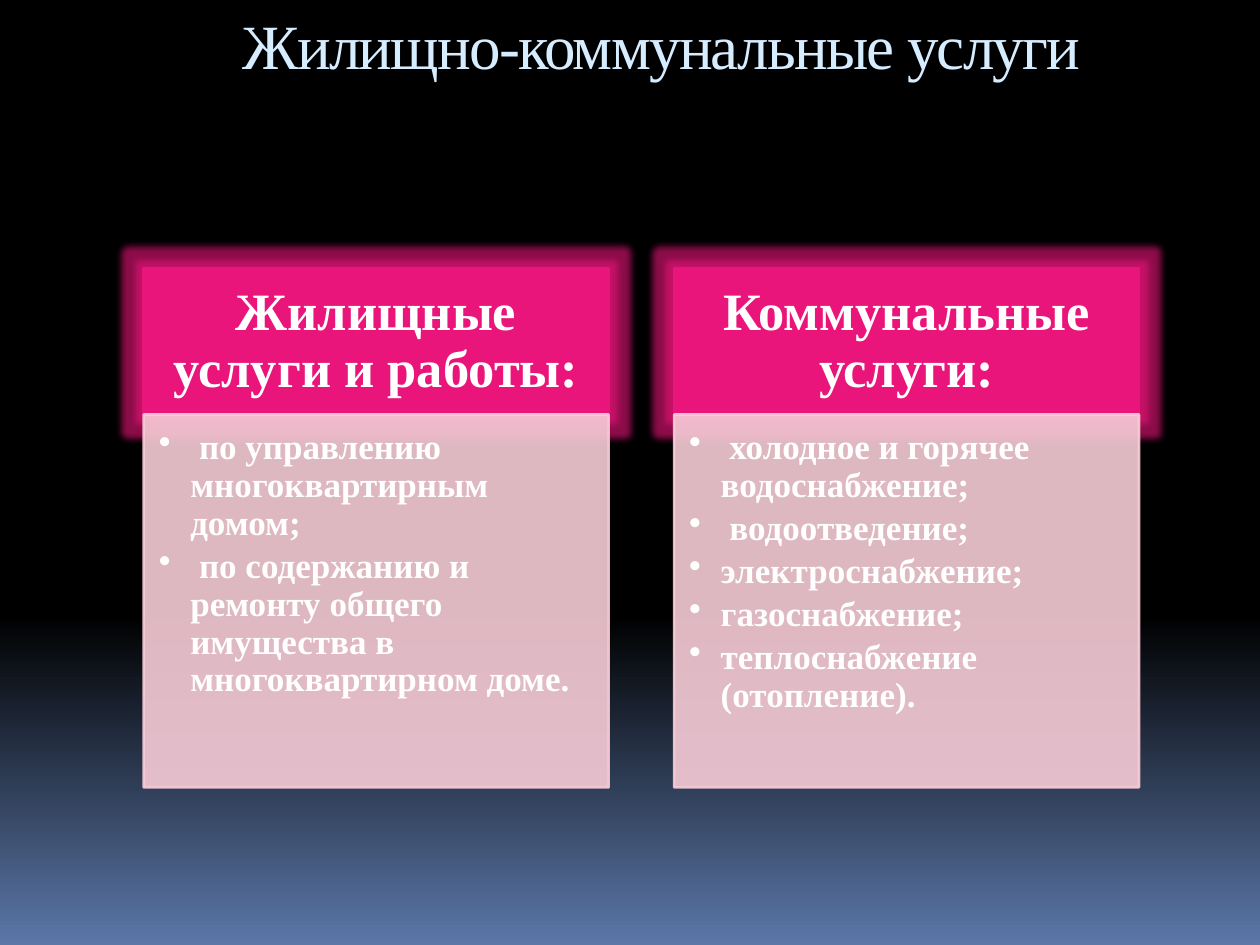
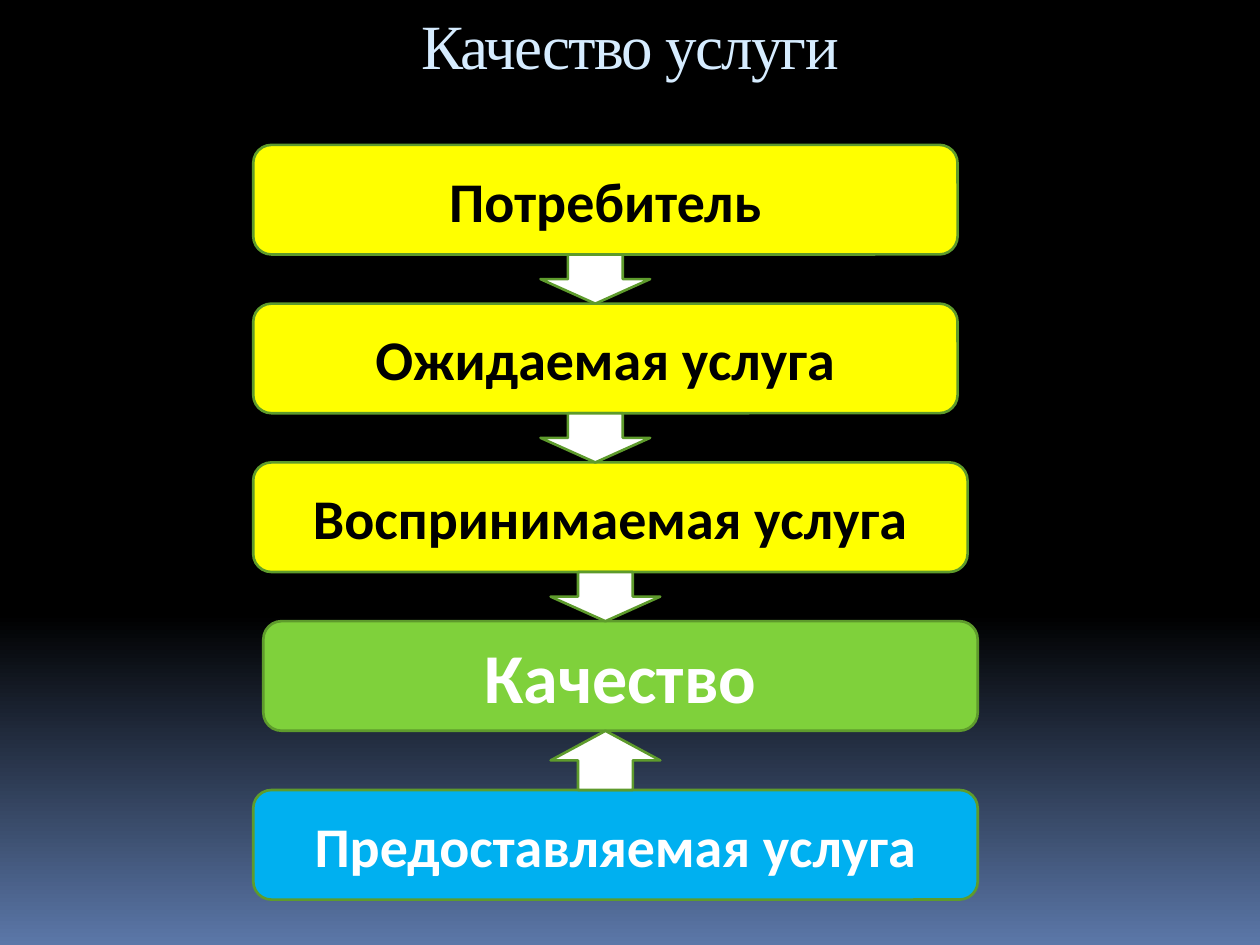
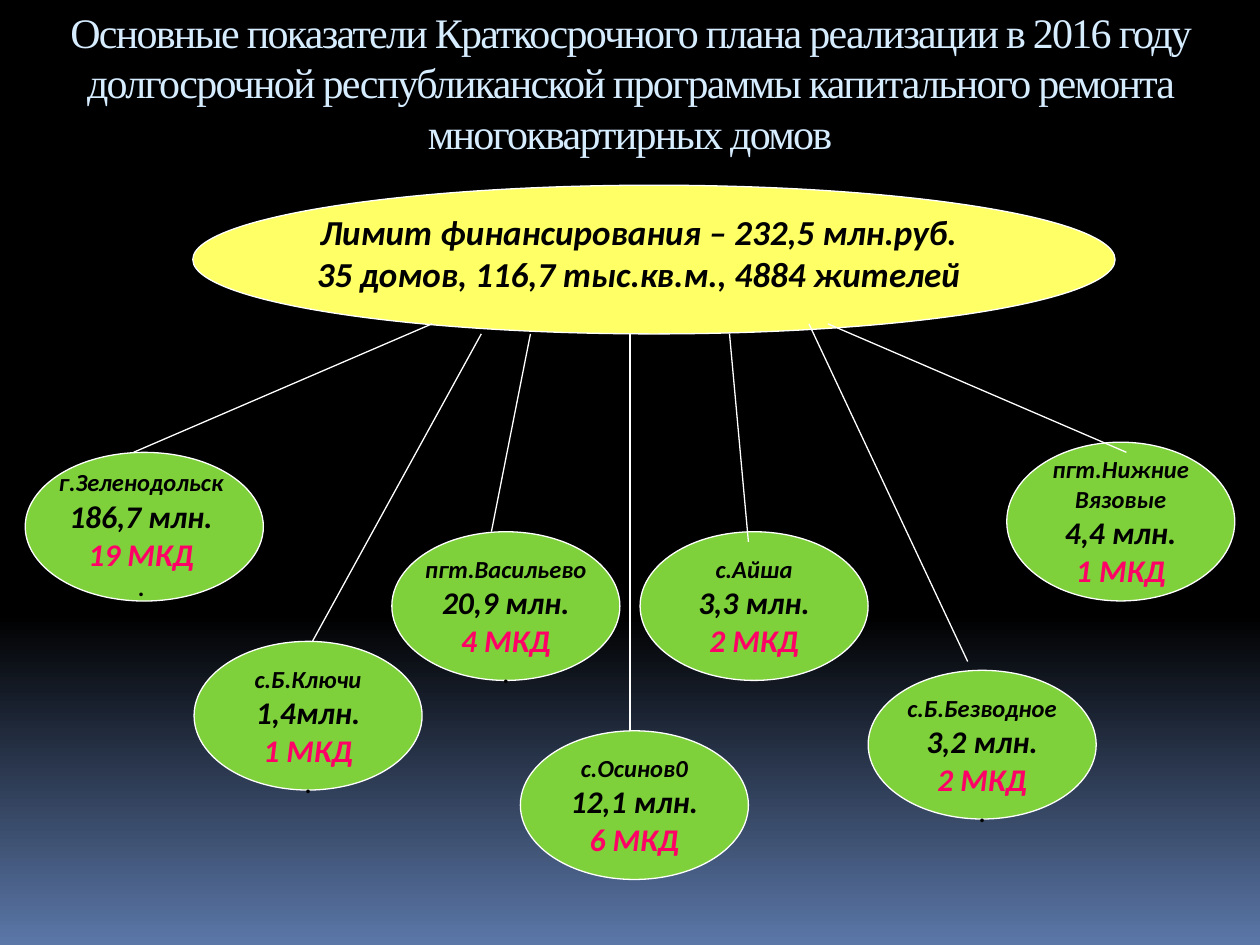
from dataclasses import dataclass, replace
from lxml.etree import SubElement
from pptx import Presentation
from pptx.dml.color import RGBColor
from pptx.enum.shapes import MSO_CONNECTOR, MSO_SHAPE
from pptx.enum.text import MSO_ANCHOR, PP_ALIGN
from pptx.oxml.ns import qn
from pptx.util import Inches, Pt


@dataclass(frozen=True)
class Type:
    size: float
    color: str
    font: str = "Calibri"
    bold: bool = True
    italic: bool = False
    spacing: int = 0
    leading: float = 1.0
    after: float = 0
    bullet: bool = False


@dataclass(frozen=True)
class Theme:
    black: str = "000000"
    white: str = "FFFFFF"
    dusk: str = "5B77A8"
    pink: str = "EA157A"
    blush: str = "F7CCD7"
    yellow: str = "FFFF00"
    lemon: str = "FFFF66"
    green: str = "7FD13B"
    leaf: str = "5E9B2C"
    blue: str = "00B0F0"
    serif: str = "Times New Roman"
    title: Type = Type(36, "D6ECFF", serif, bold=False, spacing=-100)
    long_title: Type = replace(title, size=24)
    heading: Type = Type(30, white, serif, leading=0.9)
    item: Type = Type(20, white, serif, leading=0.9, after=3, bullet=True)
    step: Type = Type(32, black)
    light_step: Type = replace(step, color=white)
    result: Type = replace(light_step, size=40)
    limit: Type = Type(20, black, italic=True)
    place: Type = replace(limit, size=14)
    money: Type = replace(limit, size=18)
    houses: Type = replace(money, color="FF0066")
    dot: Type = replace(place, italic=False)


class Deck:
    COLUMNS, ROWS = 100, 75

    def __init__(self, theme):
        self.theme = theme
        self.prs = Presentation()
        self.prs.slide_width, self.prs.slide_height = Inches(10), Inches(7.5)
        self.s = None

    def slide(self):
        self.s = self.prs.slides.add_slide(self.prs.slide_layouts[6])
        fill = self.s.background.fill
        fill.gradient()
        fill.gradient_angle = 270
        stops = ((0.65, self.theme.black), (1, self.theme.dusk))
        for stop, (position, color) in zip(fill.gradient_stops, stops):
            stop.position = position
            stop.color.rgb = RGBColor.from_string(color)

    def x(self, columns):
        return round(self.prs.slide_width * columns / self.COLUMNS)

    def y(self, rows):
        return round(self.prs.slide_height * rows / self.ROWS)

    def box(self, left, top, width, height):
        return self.x(left), self.y(top), self.x(width), self.y(height)

    def fill_text(self, shape, lines, anchor=MSO_ANCHOR.TOP, insets=(1, 0.5, 1, 0.5), wrap=True):
        tf = shape.text_frame
        tf.word_wrap, tf.vertical_anchor = wrap, anchor
        left, top, right, bottom = insets
        tf.margin_left, tf.margin_right = self.x(left), self.x(right)
        tf.margin_top, tf.margin_bottom = self.y(top), self.y(bottom)
        for i, (text, style) in enumerate(lines):
            p = tf.add_paragraph() if i else tf.paragraphs[0]
            p.alignment = PP_ALIGN.LEFT if style.bullet else PP_ALIGN.CENTER
            p.line_spacing, p.space_after = style.leading, Pt(style.after)
            p.font.name, p.font.size = style.font, Pt(style.size)
            p.font.bold, p.font.italic = style.bold, style.italic
            p.font.color.rgb = RGBColor.from_string(style.color)
            r = p.add_run()
            r.text = text
            if style.spacing:
                r._r.get_or_add_rPr().set("spc", str(style.spacing))
            if style.bullet:
                self.bullet(p)

    def bullet(self, p):
        pPr = p._p.get_or_add_pPr()
        pPr.set("marL", str(self.x(2.5)))
        pPr.set("indent", str(-self.x(2.5)))
        mark = pPr.makeelement(qn("a:buChar"), {"char": "•"})
        pPr.find(qn("a:defRPr")).addprevious(mark)

    def text(self, at, lines):
        self.fill_text(self.s.shapes.add_textbox(*self.box(*at)), lines)

    def title(self, text, at, style):
        self.text(at, [(text, style)])

    def shape(self, kind, at, fill, line, weight=1.5):
        sp = self.s.shapes.add_shape(kind, *self.box(*at))
        sp.shadow.inherit = False
        sp.fill.solid()
        sp.fill.fore_color.rgb = RGBColor.from_string(fill)
        sp.line.color.rgb = RGBColor.from_string(line)
        sp.line.width = Pt(weight)
        return sp

    def ellipse(self, at, fill):
        return self.shape(MSO_SHAPE.OVAL, at, fill, self.theme.white, 0.75)

    def glow(self, sp, color):
        effects = sp._element.spPr.find(qn("a:effectLst"))
        glow = SubElement(effects, qn("a:glow"), rad=str(self.x(1.1)))
        clr = SubElement(glow, qn("a:srgbClr"), val=color)
        SubElement(clr, qn("a:alpha"), val="60000")

    def translucent(self, sp, percent):
        for clr in sp._element.spPr.iter(qn("a:srgbClr")):
            SubElement(clr, qn("a:alpha"), val=str(percent * 1000))

    def line(self, x1, y1, x2, y2):
        c = self.s.shapes.add_connector(
            MSO_CONNECTOR.STRAIGHT, self.x(x1), self.y(y1), self.x(x2), self.y(y2))
        c.line.color.rgb = RGBColor.from_string(self.theme.white)
        c.line.width = Pt(0.75)
        SubElement(c._element.spPr, qn("a:effectLst"))

    def card(self, left, heading, items):
        t = self.theme
        head = self.shape(MSO_SHAPE.RECTANGLE, (left, 21.3, 36.9, 11.7), t.pink, t.pink)
        self.glow(head, t.pink)
        self.fill_text(head, [(heading, t.heading)], MSO_ANCHOR.MIDDLE, (2.3, 1.3, 2.3, 1.3))
        body = self.shape(MSO_SHAPE.RECTANGLE, (left, 32.9, 36.9, 29.6), t.blush, t.blush)
        self.translucent(body, 90)
        self.fill_text(body, [(item, t.item) for item in items], insets=(1.2, 1.2, 1.6, 1.8))

    def step(self, at, text, fill, style):
        sp = self.shape(MSO_SHAPE.ROUNDED_RECTANGLE, at, fill, self.theme.leaf)
        self.fill_text(sp, [(text, style)], MSO_ANCHOR.MIDDLE)

    def arrow(self, at, rotation=0):
        sp = self.shape(MSO_SHAPE.DOWN_ARROW, at, self.theme.white, self.theme.leaf)
        sp.rotation = rotation

    def place_lines(self, names, money, houses, dotted):
        t = self.theme
        lines = [(name, t.place) for name in names]
        lines += [(money, t.money), (houses, t.houses)]
        return lines + [(".", t.dot)] * dotted

    def place(self, left, top, names, money, houses, dotted=False, height=11.8):
        sp = self.ellipse((left, top, 18.1, height), self.theme.green)
        insets = (1, 2.9 if dotted else 0.5, 1, 0.5)
        self.fill_text(sp, self.place_lines(names, money, houses, dotted),
                       MSO_ANCHOR.MIDDLE, insets, wrap=False)


def services(deck):
    deck.slide()
    deck.card(11.4, "Жилищные услуги и работы:", [
        " по управлению многоквартирным домом;",
        " по содержанию и ремонту общего имущества в многоквартирном доме."])
    deck.card(53.5, "Коммунальные услуги:", [
        " холодное и горячее водоснабжение;", " водоотведение;",
        "электроснабжение;", "газоснабжение;", "теплоснабжение (отопление)."])
    deck.title("Жилищно-коммунальные услуги", (10, 0, 85, 8.4), deck.theme.title)


def quality(deck):
    t = deck.theme
    deck.slide()
    deck.title("Качество услуги", (0, 0, 100, 7.1), t.title)
    top, pitch, height = 11.5, 12.6, 8.7
    steps = [
        (20.1, 55.9, "Потребитель", t.yellow, t.step),
        (20.1, 55.9, "Ожидаемая услуга", t.yellow, t.step),
        (20.1, 56.7, "Воспринимаемая услуга", t.yellow, t.step),
        (20.9, 56.7, "Качество", t.green, t.result)]
    for i, (left, width, text, fill, style) in enumerate(steps):
        deck.step((left, top + i * pitch, width, height), text, fill, style)
    deck.step((20.1, 62.7, 57.5, height), "Предоставляемая услуга", t.blue, t.light_step)
    for i, left in enumerate((42.9, 42.9, 43.7)):
        deck.arrow((left, top + height + i * pitch, 8.7, pitch - height))
    deck.arrow((43.7, 58, 8.7, 4.7), 180)


def plan(deck):
    t = deck.theme
    deck.slide()
    deck.title("Основные показатели Краткосрочного плана реализации в 2016 году "
               "долгосрочной республиканской программы капитального ремонта "
               "многоквартирных домов", (0, 0, 100, 13.1), t.long_title)
    deck.ellipse((15.3, 14.7, 73.2, 11.8), t.lemon)
    deck.text((23.8, 16.2, 53.8, 7.7), [
        ("Лимит финансирования – 232,5 млн.руб.", t.limit),
        ("35 домов, 116,7 тыс.кв.м., 4884 жителей", t.limit)])
    deck.ellipse((2, 35.9, 18.9, 11.8), t.green)
    deck.text((0, 36.6, 22.4, 11.8),
              deck.place_lines(["г.Зеленодольск"], "186,7 млн.", "19 МКД", True))
    deck.place(15.4, 50.9, ["с.Б.Ключи"], "1,4млн.", "1 МКД", True)
    deck.place(31.1, 42.2, ["пгт.Васильево"], "20,9 млн.", "4 МКД", True)
    deck.place(41.3, 58, ["с.Осинов0"], "12,1 млн.", "6 МКД")
    deck.place(50.8, 42.2, ["с.Айша"], "3,3 млн.", "2 МКД")
    deck.place(68.9, 53.2, ["с.Б.Безводное"], "3,2 млн.", "2 МКД", True)
    deck.place(79.9, 35.1, ["пгт.Нижние", "Вязовые"], "4,4 млн.", "1 МКД", height=12.6)
    for ends in (
            (34.3, 25.7, 10.6, 35.9), (38.2, 26.5, 24.8, 50.9),
            (42.1, 26.5, 39, 42.2), (50, 26.5, 50, 58),
            (57.9, 26.5, 59.4, 43), (64.2, 25.7, 76.8, 52.5),
            (65.7, 25.7, 89.4, 35.9)):
        deck.line(*ends)


def main():
    deck = Deck(Theme())
    for build in (services, quality, plan):
        build(deck)
    deck.prs.save("out.pptx")


if __name__ == "__main__":
    main()
